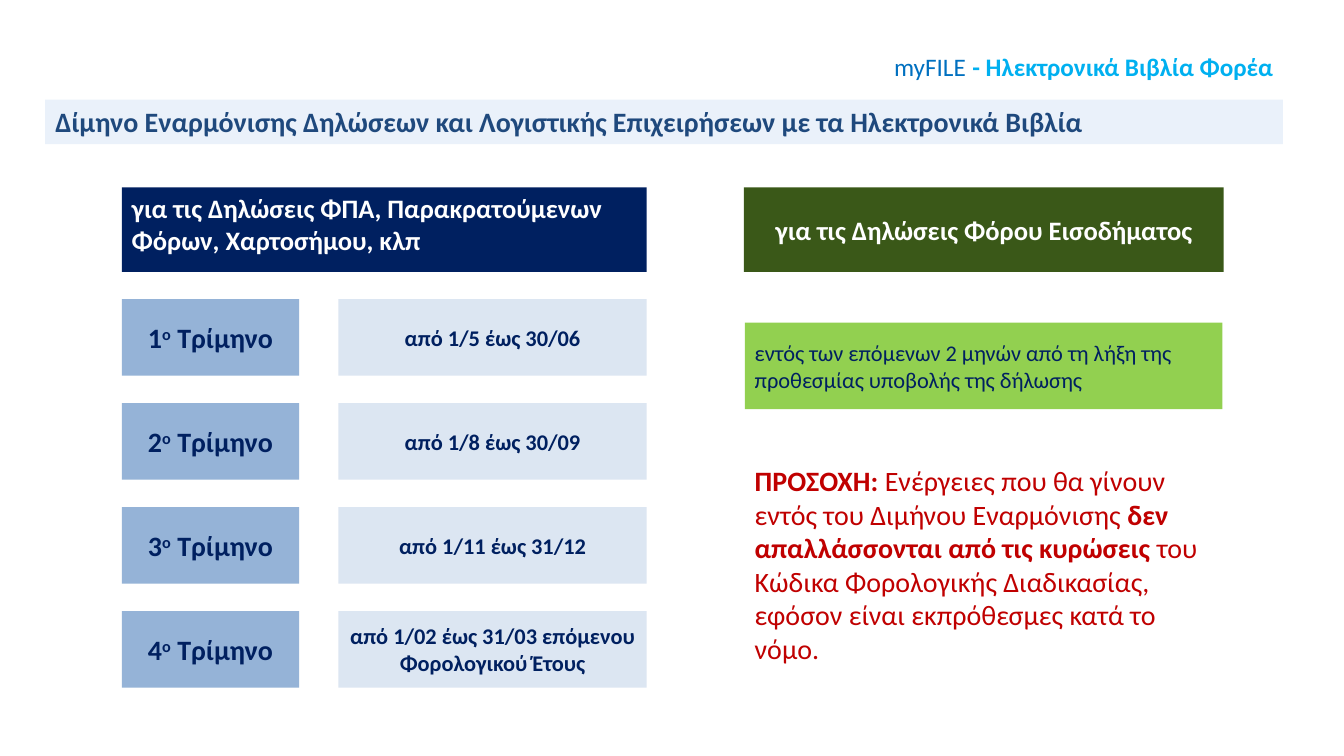
from pptx import Presentation
from pptx.dml.color import RGBColor
from pptx.enum.shapes import MSO_SHAPE
from pptx.enum.text import MSO_ANCHOR as ANCHOR, MSO_AUTO_SIZE as AUTO, PP_ALIGN as ALIGN
from pptx.util import Cm, Pt

NAVY = RGBColor(0x00, 0x20, 0x60)
TITLE_BLUE = RGBColor(0x1F, 0x49, 0x7D)
TITLE_BAND = RGBColor(0xEA, 0xF1, 0xFA)
QUARTER_BLUE = RGBColor(0x95, 0xB3, 0xD7)
PERIOD_BLUE = RGBColor(0xDC, 0xE6, 0xF2)
DARK_GREEN = RGBColor(0x3A, 0x58, 0x18)
LIME = RGBColor(0x92, 0xD0, 0x50)
RED = RGBColor(0xC0, 0x00, 0x00)
BRAND_BLUE = RGBColor(0x00, 0x70, 0xC0)
SKY = RGBColor(0x00, 0xB0, 0xF0)
WHITE = RGBColor(0xFF, 0xFF, 0xFF)

PERIODS = [
    "από 1/5 έως 30/06",
    "από 1/8 έως 30/09",
    "από 1/11 έως 31/12",
    "από 1/02 έως 31/03 επόμενου Φορολογικού Έτους",
]
ROW_TOP, ROW_PITCH, ROW_HEIGHT = 7.54, 2.62, 1.93


class SlideBuilder:
    font = "Calibri"

    def __init__(self, prs):
        self.s = prs.slides.add_slide(prs.slide_layouts[5])

    def fill_text(self, sp, runs, align=ALIGN.LEFT, anchor=ANCHOR.MIDDLE, wrap=True):
        tf = sp.text_frame
        frame = {"word_wrap": wrap, "auto_size": AUTO.NONE, "vertical_anchor": anchor}
        for name, value in frame.items():
            setattr(tf, name, value)
        p = tf.paragraphs[0]
        p.alignment = align
        for text, size, color, bold, *baseline in runs:
            r = p.add_run()
            r.text = text
            style = {"name": self.font, "size": Pt(size), "bold": bold}
            for name, value in style.items():
                setattr(r.font, name, value)
            r.font.color.rgb = color
            if baseline:
                r._r.get_or_add_rPr().set("baseline", str(baseline[0]))

    def title(self, box, fill, runs):
        sp = self.s.shapes.title
        for name, value in zip(("left", "top", "width", "height"), box):
            setattr(sp, name, Cm(value))
        sp.fill.solid()
        sp.fill.fore_color.rgb = fill
        self.fill_text(sp, runs, anchor=ANCHOR.TOP)

    def block(self, box, fill, runs, **layout):
        sp = self.s.shapes.add_shape(MSO_SHAPE.RECTANGLE, *map(Cm, box))
        sp.shadow.inherit = False
        sp.fill.solid()
        sp.fill.fore_color.rgb = fill
        sp.line.fill.background()
        self.fill_text(sp, runs, **layout)

    def text(self, box, runs, **layout):
        sp = self.s.shapes.add_textbox(*map(Cm, box))
        self.fill_text(sp, runs, **layout)


def main():
    prs = Presentation()
    prs.slide_width, prs.slide_height = Cm(33.87), Cm(19.05)
    b = SlideBuilder(prs)

    b.title((1.14, 2.51, 31.19, 1.12), TITLE_BAND, [
        ("Δίμηνο Εναρμόνισης Δηλώσεων και Λογιστικής Επιχειρήσεων με τα Ηλεκτρονικά Βιβλία",
         20, TITLE_BLUE, True)])
    b.text((21.54, 1.09, 10.8, 1.12), [
        ("myFILE", 18, BRAND_BLUE, False),
        (" ", 20, BRAND_BLUE, True),
        ("- Ηλεκτρονικά Βιβλία Φορέα", 18, SKY, True),
    ], align=ALIGN.RIGHT, anchor=ANCHOR.TOP)

    b.block((3.07, 4.72, 13.23, 2.13), NAVY, [
        ("για τις Δηλώσεις ΦΠΑ, Παρακρατούμενων Φόρων, Χαρτοσήμου, κλπ", 19, WHITE, True),
    ], anchor=ANCHOR.TOP)
    for i, period in enumerate(PERIODS):
        top = ROW_TOP + i * ROW_PITCH
        b.block((3.07, top, 4.47, ROW_HEIGHT), QUARTER_BLUE, [
            (str(i + 1), 20, NAVY, True),
            ("ο", 20, NAVY, True, 30000),
            (" Τρίμηνο", 20, NAVY, True),
        ], align=ALIGN.CENTER)
        b.block((8.53, top, 7.77, ROW_HEIGHT), PERIOD_BLUE,
                [(period, 16, NAVY, True)], align=ALIGN.CENTER)

    b.block((18.75, 4.72, 12.09, 2.13), DARK_GREEN, [
        ("για τις Δηλώσεις Φόρου Εισοδήματος", 19, WHITE, True),
    ], align=ALIGN.CENTER, wrap=False)
    b.block((18.77, 8.13, 12.04, 2.18), LIME, [
        ("εντός των επόμενων 2 μηνών από τη λήξη της προθεσμίας υποβολής της δήλωσης",
         16, NAVY, False)])
    b.text((18.77, 11.53, 12.04, 5.38), [
        ("ΠΡΟΣΟΧΗ: ", 20, RED, True),
        ("Ενέργειες που θα γίνουν εντός του Διμήνου Εναρμόνισης ", 20, RED, False),
        ("δεν απαλλάσσονται από τις κυρώσεις", 20, RED, True),
        (" του Κώδικα Φορολογικής Διαδικασίας, εφόσον είναι εκπρόθεσμες κατά το νόμο.",
         20, RED, False),
    ])
    prs.save("out.pptx")


if __name__ == "__main__":
    main()
